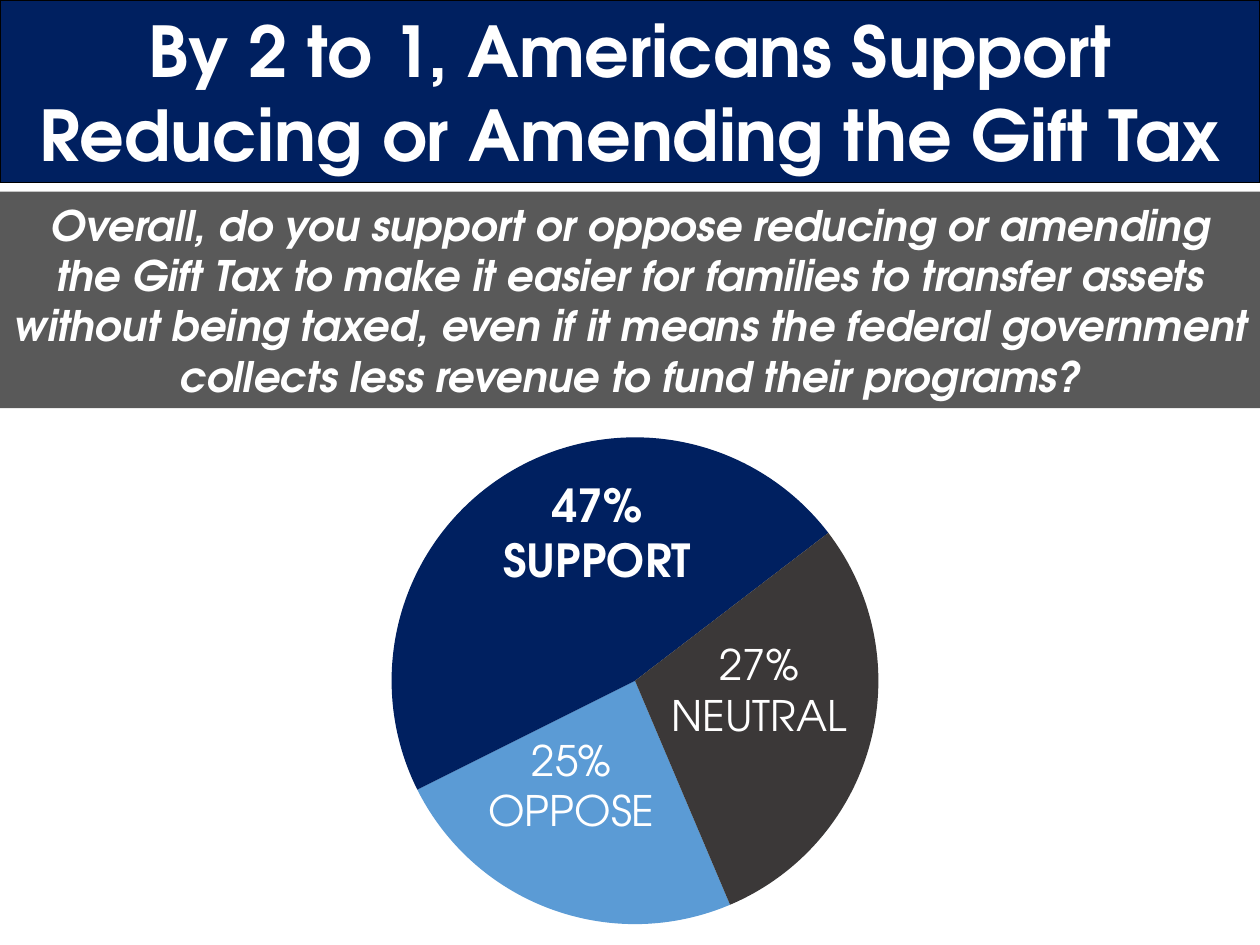
from dataclasses import dataclass

from lxml import etree
from pptx import Presentation
from pptx.chart.data import CategoryChartData
from pptx.dml.color import RGBColor
from pptx.enum.chart import XL_CHART_TYPE
from pptx.enum.shapes import MSO_SHAPE
from pptx.enum.text import MSO_ANCHOR, PP_ALIGN
from pptx.oxml.ns import qn
from pptx.util import Inches, Pt

PIE = XL_CHART_TYPE.PIE
RECTANGLE = MSO_SHAPE.RECTANGLE
MIDDLE, TOP = MSO_ANCHOR.MIDDLE, MSO_ANCHOR.TOP
CENTER = PP_ALIGN.CENTER


@dataclass(frozen=True)
class Theme:
    """Colours, fonts and type sizes of the slide."""

    navy: RGBColor = RGBColor(0x00, 0x20, 0x60)
    gray: RGBColor = RGBColor(0x59, 0x59, 0x59)
    blue: RGBColor = RGBColor(0x5B, 0x9B, 0xD5)
    charcoal: RGBColor = RGBColor(0x3B, 0x38, 0x38)
    black: RGBColor = RGBColor(0x00, 0x00, 0x00)
    white: RGBColor = RGBColor(0xFF, 0xFF, 0xFF)
    font: str = "TeX Gyre Adventor"
    chart_font: str = "Calibri"
    title_size: int = 40
    question_size: int = 24
    support_size: int = 26
    label_size: int = 24
    chart_size: int = 18


THEME = Theme()


def write_lines(frame, lines, size, bold=False, italic=False, anchor=TOP):
    """Write centred white paragraphs into a text frame."""
    frame.word_wrap = True
    frame.vertical_anchor = anchor
    for index, line in enumerate(lines):
        paragraph = frame.paragraphs[0] if index == 0 else frame.add_paragraph()
        paragraph.text = line
        paragraph.alignment = CENTER
        font = paragraph.font
        font.name, font.size = THEME.font, Pt(size)
        font.bold, font.italic = bold, italic
        font.color.rgb = THEME.white


def add_banner(slide, box, text, fill, size, italic=False, outline=None):
    """Add a filled band with bold text across the given box."""
    banner = slide.shapes.add_shape(RECTANGLE, *map(Inches, box))
    banner.shadow.inherit = False
    banner.fill.solid()
    banner.fill.fore_color.rgb = fill
    if outline is None:
        banner.line.fill.background()
    else:
        banner.line.color.rgb = outline
        banner.line.width = Pt(0.75)
    write_lines(banner.text_frame, [text], size, True, italic, MIDDLE)


def set_pie_geometry(chart, start_angle, plot_box):
    """Rotate the first slice and fix the inner plot area."""
    plot_area = chart.element.find(".//" + qn("c:plotArea"))
    pie = plot_area.find(qn("c:pieChart"))
    for parent, tag in ((plot_area, "c:layout"), (pie, "c:firstSliceAng")):
        for old in parent.findall(qn(tag)):
            parent.remove(old)
    etree.SubElement(pie, qn("c:firstSliceAng")).set("val", str(start_angle))
    layout = etree.Element(qn("c:layout"))
    plot_area.insert(0, layout)
    manual = etree.SubElement(layout, qn("c:manualLayout"))
    settings = [("layoutTarget", "inner"), ("xMode", "edge"), ("yMode", "edge")]
    settings += zip("xywh", plot_box)
    for name, value in settings:
        etree.SubElement(manual, qn(f"c:{name}")).set("val", str(value))


def add_opinion_pie(slide, box):
    """Add the pie of opinions with its slice labels inside the given box."""
    left, top, width, height = box
    data = CategoryChartData()
    data.categories = ["1", "2", "3"]
    data.add_series("Series 1", (24, 47, 29))
    chart = slide.shapes.add_chart(PIE, *map(Inches, box), data).chart
    chart.has_legend = False
    chart.has_title = False
    chart.font.name = THEME.chart_font
    chart.font.size = Pt(THEME.chart_size)
    chart.font.color.rgb = THEME.black
    plot = chart.plots[0]
    plot.vary_by_categories = False
    for index, color in enumerate((THEME.blue, THEME.navy, THEME.charcoal)):
        slice_format = plot.series[0].points[index].format
        slice_format.fill.solid()
        slice_format.fill.fore_color.rgb = color
        slice_format.line.fill.background()
    set_pie_geometry(chart, 157, (0.015, 0.05, 0.97, 0.8))

    labels = [
        (("25%", "OPPOSE"), (3.42, 2.55, 2.57, 1.25), THEME.label_size, False),
        (("47%", "SUPPORT"), (3.16, 0.51, 3.5, 1.41), THEME.support_size, True),
        (("27%", "NEUTRAL"), (4.91, 1.79, 2.57, 0.91), THEME.label_size, False),
    ]
    for lines, (dx, dy, label_width, label_height), size, bold in labels:
        label_box = (left + dx, top + dy, label_width, label_height)
        label = slide.shapes.add_textbox(*map(Inches, label_box))
        write_lines(label.text_frame, lines, size, bold)


def main():
    """Build and save the gift tax survey slide."""
    deck = Presentation()
    deck.slide_width, deck.slide_height = Inches(10), Inches(7.5)
    slide = deck.slides.add_slide(deck.slide_layouts[6])
    add_banner(
        slide,
        (0, 0, 10, 1.45),
        "By 2 to 1, Americans Support Reducing or Amending the Gift Tax",
        THEME.navy,
        THEME.title_size,
        outline=THEME.black,
    )
    add_banner(
        slide,
        (0, 1.52, 10, 1.72),
        "Overall, do you support or oppose reducing or amending the Gift Tax "
        "to make it easier for families to transfer assets without being taxed, "
        "even if it means the federal government collects less revenue to fund "
        "their programs?",
        THEME.gray,
        THEME.question_size,
        italic=True,
    )
    add_opinion_pie(slide, (-0.17, 3.23, 10.42, 4.83))
    deck.save("out.pptx")


if __name__ == "__main__":
    main()
